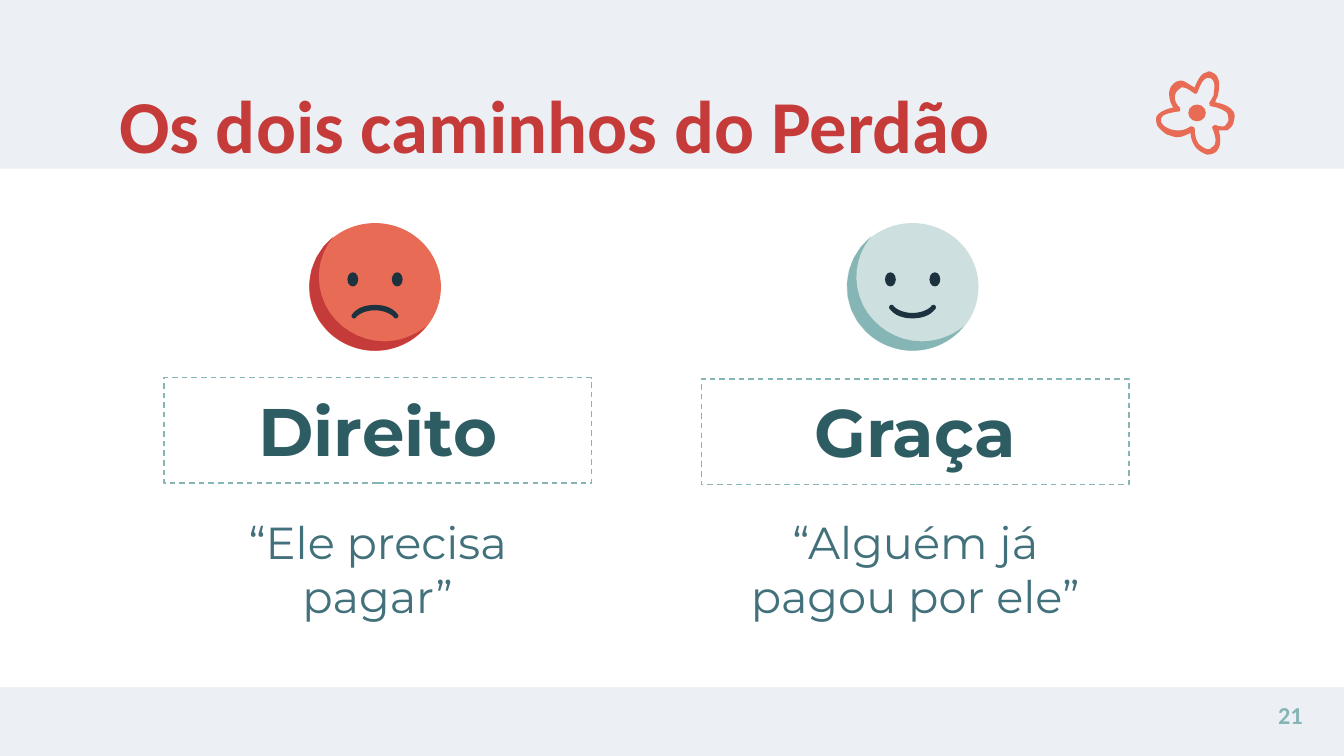
"""Build the slide that contrasts the two paths of forgiveness."""
from dataclasses import dataclass

from pptx import Presentation
from pptx.dml.color import RGBColor
from pptx.enum.dml import MSO_LINE_DASH_STYLE as Dash
from pptx.enum.shapes import MSO_SHAPE as Preset
from pptx.enum.text import MSO_ANCHOR as Anchor, PP_ALIGN as Align
from pptx.util import Pt

COLORS = {
    "background": "ECF0F5", "white": "FFFFFF", "red": "C53B39", "coral": "E86B56",
    "teal": "85B5B4", "mist": "CEDFDF", "ink": "1C323E", "heading": "2E5C63",
    "body": "42717C",
}
COLUMN_WIDTH = 229
FACE_Y = 153.7

CRESCENT = [
    (-22.3, -27), (-38.2, -14), (-39.6, 9.7), (-24.8, 24.1),
    (-18, 30.6), (-9, 34.2), (0, 34.2), (10.1, 34.2), (20.2, 29.9), (27.4, 21.2),
    (20.9, 26.3), (13, 29.2), (5, 29.2), (-8.6, 29.2), (-20.9, 21.2), (-26.6, 9.7),
    (-32.4, -2.5), (-31, -16.2), (-22.3, -27),
]
HALF_FROWN = [
    (0, -3.6), (-5, -3.6), (-9.4, -2.2), (-12.2, 1.4), (-13, 2.2), (-12.2, 3.6),
    (-11.5, 3.6), (-10.8, 3.6), (-10.1, 3.6), (-10.1, 2.9),
    (-7.9, 0.7), (-4.3, -0.7), (0, -0.7),
]
PETALS_OUTER = [
    (6.5, -22.3), (6.5, -22.3), (5.8, -21.6), (5, -21.6),
    (2.2, -20.9), (0, -15.8), (-0.7, -13.7), (-2.9, -14.4), (-5.8, -17.3), (-7.9, -17.3),
    (-10.8, -17.3), (-12.2, -15.8), (-13.7, -13.7),
    (-15.1, -10.8), (-14.4, -5.8), (-12.2, -2.9), (-15.8, -2.2), (-19.4, -0.7), (-20.9, 1.4),
    (-21.6, 2.2), (-21.6, 4.3), (-20.9, 6.5), (-20.2, 7.9), (-18, 10.1), (-15.8, 11.5),
    (-13.7, 12.2), (-11.5, 13), (-10.1, 13), (-7.2, 13), (-5, 11.5), (-2.9, 10.8),
    (-2.9, 13), (-2.2, 15.8), (0, 18.7), (1.4, 20.2), (3.6, 21.6), (5.8, 22.3),
    (7.2, 22.3), (7.9, 22.3), (9.4, 21.6), (11.5, 20.9), (14.4, 17.3), (12.2, 9.4),
    (13, 9.4), (15.1, 9.4), (16.6, 9.4), (18, 8.6), (20.2, 6.5), (20.2, 4.3),
    (20.9, 2.2), (20.9, 0), (19.4, -1.4), (17.3, -4.3), (13, -5), (10.1, -5.8),
    (10.8, -6.5), (10.8, -7.9), (11.5, -8.6), (12.2, -11.5), (13.7, -18), (10.1, -20.9),
    (8.6, -21.6), (7.9, -22.3), (6.5, -22.3),
]
PETALS_INNER = [
    (6.5, -18.7), (7.2, -18.7), (7.9, -18.7), (8.6, -18),
    (10.8, -15.8), (9.4, -11.5), (9.4, -9.4), (8.6, -7.9), (7.9, -6.5), (7.2, -5.8),
    (7.2, -4.3), (7.2, -3.6), (7.9, -3.6), (12.2, -2.9), (15.1, -1.4), (16.6, 0),
    (17.3, 1.4), (17.3, 2.9), (17.3, 4.3), (16.6, 5.8), (15.8, 6.5), (15.1, 7.2),
    (13.7, 7.2), (11.5, 7.2), (10.8, 6.5), (9.4, 6.5), (8.6, 7.2), (8.6, 7.9),
    (10.1, 11.5), (12.2, 17.3), (7.9, 18.7), (7.9, 19.4), (7.2, 19.4), (6.5, 19.4),
    (5, 19.4), (2.9, 18), (1.4, 16.6), (0, 14.4), (-0.7, 12.2), (-0.7, 8.6),
    (-0.7, 7.9), (-1.4, 7.2), (-2.9, 7.2), (-5, 8.6), (-7.2, 9.4), (-9.4, 9.4),
    (-13, 9.4), (-17.3, 7.9), (-18.7, 5), (-18.7, 4.3), (-18.7, 3.6), (-18.7, 2.9),
    (-18, 0.7), (-14.4, 0), (-10.1, -0.7), (-9.4, -0.7), (-8.6, -0.7), (-8.6, -1.4),
    (-8.6, -2.2), (-8.6, -2.2), (-8.6, -2.9), (-12.2, -5.8), (-11.5, -9.4), (-10.8, -10.8),
    (-10.1, -12.2), (-8.6, -13), (-7.9, -13.7), (-5, -13.7), (-3.6, -12.2), (-1.4, -10.8),
    (-0.7, -10.1), (0, -10.1), (0.7, -10.8), (2.2, -15.1), (3.6, -18), (5.8, -18.7),
]


@dataclass(frozen=True)
class Path:
    """One way to forgive: its column, heading, quote and face."""
    left: float
    heading_top: float
    heading: str
    quote: str
    face_x: float
    skin: str
    shade: str
    smiling: bool


PATHS = [
    Path(87.8, 202.3, "Direito", "“Ele precisa pagar”", 200.9, "coral", "red", False),
    Path(375.8, 203, "Graça", "“Alguém já pagou por ele”", 488.9, "mist", "teal", True),
]


def rgb(color: str) -> RGBColor:
    """Return the named colour."""
    return RGBColor.from_string(COLORS[color])


def paint(shape, color: str) -> None:
    """Give a shape a flat fill with no line or shadow."""
    shape.shadow.inherit = False
    shape.fill.solid()
    shape.fill.fore_color.rgb = rgb(color)
    shape.line.fill.background()


def trace(curve: list, steps: int = 8) -> list:
    """Sample a chain of cubic curves that share their end points."""
    points = [curve[0]]
    for start in range(0, len(curve) - 1, 3):
        a, b, c, d = curve[start:start + 4]
        for step in range(1, steps + 1):
            t = step / steps
            u = 1 - t
            points.append(tuple(
                u**3 * a[i] + 3 * u * u * t * b[i] + 3 * u * t * t * c[i] + t**3 * d[i]
                for i in (0, 1)))
    return points


def add_outline(slide, x: float, y: float, contours: list, color: str) -> None:
    """Draw filled closed contours around a centre."""
    placed = [[(Pt(x + dx), Pt(y + dy)) for dx, dy in contour] for contour in contours]
    builder = slide.shapes.build_freeform(*placed[0][0])
    for index, contour in enumerate(placed):
        if index:
            builder.move_to(*contour[0])
        builder.add_line_segments(contour[1:], close=True)
    paint(builder.convert_to_shape(), color)


def add_oval(slide, x: float, y: float, width: float, height: float, color: str) -> None:
    """Draw a filled oval around a centre."""
    paint(slide.shapes.add_shape(Preset.OVAL, Pt(x - width / 2), Pt(y - height / 2),
                                 Pt(width), Pt(height)), color)


def add_text(slide, text: str, left: float, top: float, width: float, height: float, *,
             size: float, color: str, font: str = "Montserrat", bold: bool = False,
             align=Align.CENTER, anchor=Anchor.TOP, framed: bool = False) -> None:
    """Add one formatted paragraph, framed by a dashed rectangle if asked."""
    bounds = [Pt(length) for length in (left, top, width, height)]
    if framed:
        box = slide.shapes.add_shape(Preset.RECTANGLE, *bounds)
        box.shadow.inherit = False
        box.fill.background()
        box.line.color.rgb = rgb("teal")
        box.line.width = Pt(0.75)
        box.line.dash_style = Dash.DASH
    else:
        box = slide.shapes.add_textbox(*bounds)
    frame = box.text_frame
    frame.word_wrap = True
    frame.vertical_anchor = anchor
    frame.margin_left = frame.margin_right = frame.margin_top = frame.margin_bottom = Pt(7.2)
    paragraph = frame.paragraphs[0]
    paragraph.alignment = align
    run = paragraph.add_run()
    run.text = text
    run.font.name, run.font.size, run.font.bold = font, Pt(size), bold
    run.font.color.rgb = rgb(color)


def add_face(slide, path: Path) -> None:
    """Draw the smiling or sad face of a path."""
    x = path.face_x
    add_oval(slide, x, FACE_Y, 70.6, 68.4, path.skin)
    for side in (-1, 1):
        add_oval(slide, x + side * 11.9, FACE_Y - 4, 5.8, 7.6, "ink")
    flip = -1 if path.smiling else 1
    half = [(dx, flip * dy) for dx, dy in trace(HALF_FROWN)]
    mouth = half + [(-dx, dy) for dx, dy in reversed(half)]
    add_outline(slide, x, FACE_Y + 13.3, [mouth], "ink")
    add_outline(slide, x, FACE_Y, [trace(CRESCENT)], path.shade)


def add_flower(slide, x: float, y: float) -> None:
    """Draw the outlined flower and its centre."""
    add_outline(slide, x, y, [trace(PETALS_OUTER), trace(PETALS_INNER)], "coral")
    add_oval(slide, x + 0.5, y, 9.4, 9, "coral")


def main() -> None:
    """Assemble and save the slide."""
    deck = Presentation()
    deck.slide_width, deck.slide_height = Pt(720), Pt(405)
    slide = deck.slides.add_slide(deck.slide_layouts[6])
    slide.background.fill.solid()
    slide.background.fill.fore_color.rgb = rgb("background")
    paint(slide.shapes.add_shape(Preset.RECTANGLE, 0, Pt(90.4), Pt(720), Pt(277.8)), "white")
    add_text(slide, "21", 661.7, 368, 43.2, 31, size=13, color="teal", font="Calibri",
             bold=True, align=Align.RIGHT)
    add_text(slide, "Os dois caminhos do Perdão", 56.7, 35.3, 607, 45.4, size=40,
             color="red", font="Calibri", bold=True, align=Align.LEFT)
    for path in PATHS:
        add_text(slide, path.heading, path.left, path.heading_top, COLUMN_WIDTH, 56.5,
                 size=36, color="heading", bold=True, anchor=Anchor.BOTTOM, framed=True)
        add_text(slide, path.quote, path.left, 268.6, COLUMN_WIDTH, 85, size=24, color="body")
        add_face(slide, path)
    add_flower(slide, 640.8, 60.5)
    deck.save("out.pptx")


if __name__ == "__main__":
    main()
